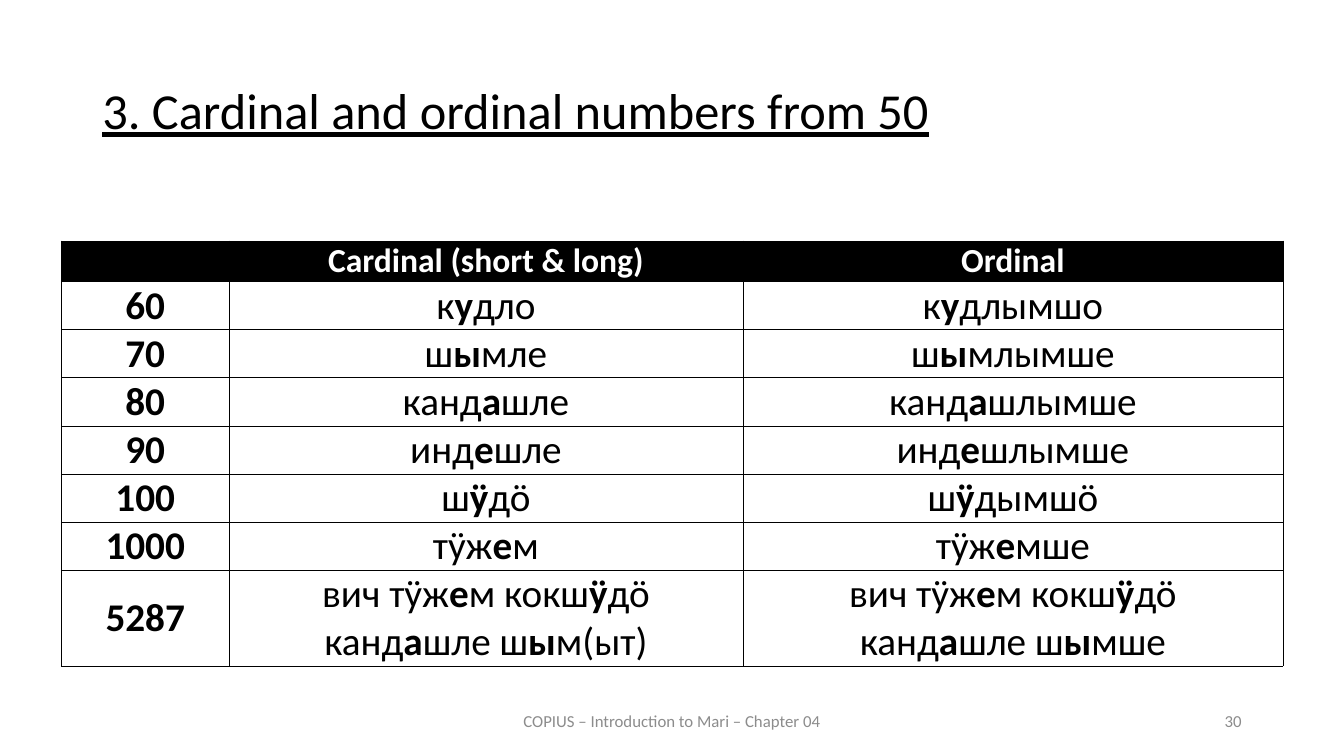
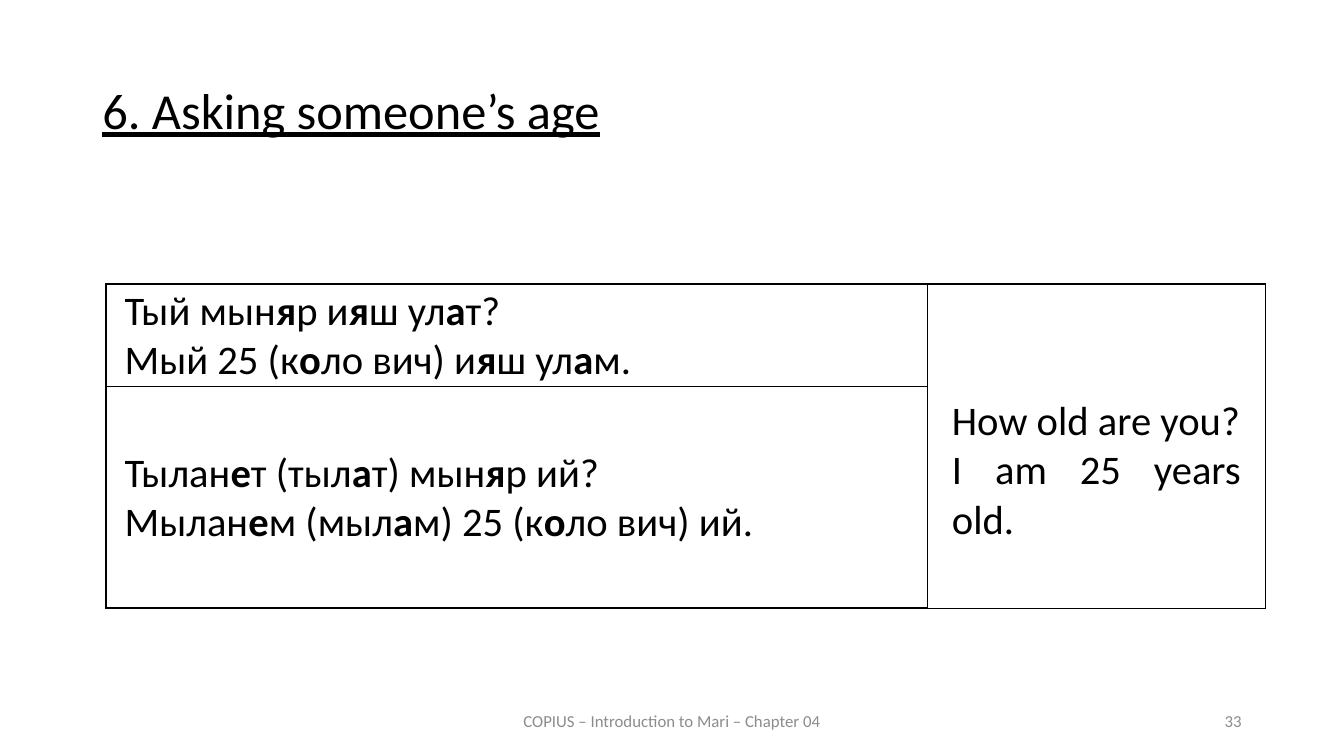
from lxml import etree
from pptx import Presentation
from pptx import util as u
from pptx.dml import color
from pptx.enum import text
from pptx.oxml import ns

FONT = "Calibri"
BLACK, WHITE, GRAY = "000000", "FFFFFF", "8C8C8C"
FOOTER = "COPIUS – Introduction to Mari – Chapter 04"
LEFT, CENTER = text.PP_ALIGN.LEFT, text.PP_ALIGN.CENTER
RIGHT, JUSTIFY = text.PP_ALIGN.RIGHT, text.PP_ALIGN.JUSTIFY
TOP, MIDDLE = text.MSO_ANCHOR.TOP, text.MSO_ANCHOR.MIDDLE

NUMBERS = [
    ("", "*Cardinal (short & long)*", "*Ordinal*"),
    ("*60*", "к*у*дло", "к*у*длымшо"),
    ("*70*", "ш*ы*мле", "ш*ы*млымше"),
    ("*80*", "канд*а*шле", "канд*а*шлымше"),
    ("*90*", "инд*е*шле", "инд*е*шлымше"),
    ("*100*", "ш*ӱ*дӧ", "ш*ӱ*дымшӧ"),
    ("*1000*", "тӱж*е*м", "тӱж*е*мше"),
    ("*5287*",
     "вич тӱж*е*м кокш*ӱ*дӧ\nканд*а*шле ш*ы*м(ыт)",
     "вич тӱж*е*м кокш*ӱ*дӧ\nканд*а*шле ш*ы*мше"),
]
AGE_QUESTIONS = [
    "Тый мын*я*р и*я*ш ул*а*т?\nМый 25 (к*о*ло вич) и*я*ш ул*а*м.",
    "Тылан*е*т (тыл*а*т) мын*я*р ий?\nМылан*е*м (мыл*а*м) 25 (к*о*ло вич) ий.",
]
AGE_ENGLISH = "How old are you?\nI am 25 years old."


def rgb(value):
    return color.RGBColor.from_string(value)


def write(frame, content, size, ink, align):
    """Write one paragraph per line; words between asterisks are bold."""
    for index, line in enumerate(content.split("\n")):
        para = frame.add_paragraph() if index else frame.paragraphs[0]
        para.alignment = align
        for part, piece in enumerate(line.split("*")):
            if piece:
                span = para.add_run()
                span.text = piece
                span.font.name = FONT
                span.font.size = u.Pt(size)
                span.font.bold = part % 2 == 1
                span.font.color.rgb = rgb(ink)


def add_text(page, content, left, top, width, height, size, ink, align):
    box = page.shapes.add_textbox(u.Cm(left), u.Cm(top), u.Cm(width), u.Cm(height))
    frame = box.text_frame
    frame.word_wrap = True
    frame.vertical_anchor = MIDDLE
    write(frame, content, size, ink, align)
    return frame.paragraphs[0]


def add_page(deck, title, number):
    page = deck.slides.add_slide(deck.slide_layouts[6])
    heading = add_text(page, title, 2.33, 1.01, 29.21, 3.68, 36, BLACK, JUSTIFY)
    heading.line_spacing = 0.9
    heading.runs[0].font.underline = True
    add_text(page, FOOTER, 11.22, 17.65, 11.43, 1.02, 12, GRAY, CENTER)
    add_text(page, str(number), 23.92, 17.65, 7.62, 1.02, 12, GRAY, RIGHT)
    return page


def set_borders(cell, sides):
    properties = cell._tc.get_or_add_tcPr()
    for side, points in zip("LRTB", sides):
        line = etree.SubElement(properties, ns.qn("a:ln" + side), w=str(u.Pt(points)))
        fill = etree.SubElement(line, ns.qn("a:solidFill"))
        etree.SubElement(fill, ns.qn("a:srgbClr"), val=BLACK)


def add_grid(page, left, top, widths, heights, outer, inner):
    shape = page.shapes.add_table(
        len(heights), len(widths), u.Cm(left), u.Cm(top),
        u.Cm(sum(widths)), u.Cm(sum(heights)))
    grid = shape.table
    grid.first_row = grid.horz_banding = False
    for column, width in zip(grid.columns, widths):
        column.width = u.Cm(width)
    for row, height in zip(grid.rows, heights):
        row.height = u.Cm(height)
    last_row, last_column = len(heights) - 1, len(widths) - 1
    for r in range(len(heights)):
        for c in range(len(widths)):
            edges = (c == 0, c == last_column, r == 0, r == last_row)
            cell = grid.cell(r, c)
            set_borders(cell, [outer if edge else inner for edge in edges])
            cell.fill.background()
    return grid


def fill_cell(cell, content, size, ink, align, margins, anchor=MIDDLE):
    cell.margin_left = cell.margin_right = u.Cm(margins[0])
    cell.margin_top, cell.margin_bottom = u.Cm(margins[1]), u.Cm(margins[2])
    cell.vertical_anchor = anchor
    write(cell.text_frame, content, size, ink, align)


def add_numbers_page(deck):
    page = add_page(deck, "3. Cardinal and ordinal numbers from 50", 30)
    heights = [1.03] + [1.21] * 6 + [2.42]
    grid = add_grid(page, 1.55, 6.07, [4.22, 12.95, 13.61], heights, 0.5, 0.5)
    for r, row in enumerate(NUMBERS):
        size, ink, anchor = (28, BLACK, MIDDLE) if r else (24, WHITE, TOP)
        for c, content in enumerate(row):
            cell = grid.cell(r, c)
            fill_cell(cell, content, size, ink, CENTER, (0.18, 0, 0), anchor)
            if r == 0:
                cell.fill.solid()
                cell.fill.fore_color.rgb = rgb(BLACK)


def add_age_page(deck):
    page = add_page(deck, "6. Asking someone’s age", 33)
    grid = add_grid(page, 2.68, 7.16, [20.7, 8.51], [2.57, 5.6], 1.5, 1)
    for r, content in enumerate(AGE_QUESTIONS):
        fill_cell(grid.cell(r, 0), content, 29, BLACK, JUSTIFY, (0.46, 0.05, 0))
    english = grid.cell(0, 1)
    english.merge(grid.cell(1, 1))
    set_margins = (0.61, 1.55, 0.3)
    fill_cell(english, AGE_ENGLISH, 29, BLACK, JUSTIFY, set_margins)


def main():
    deck = Presentation()
    deck.slide_width, deck.slide_height = u.Cm(33.87), u.Cm(19.05)
    add_numbers_page(deck)
    add_age_page(deck)
    deck.save("out.pptx")


if __name__ == "__main__":
    main()
